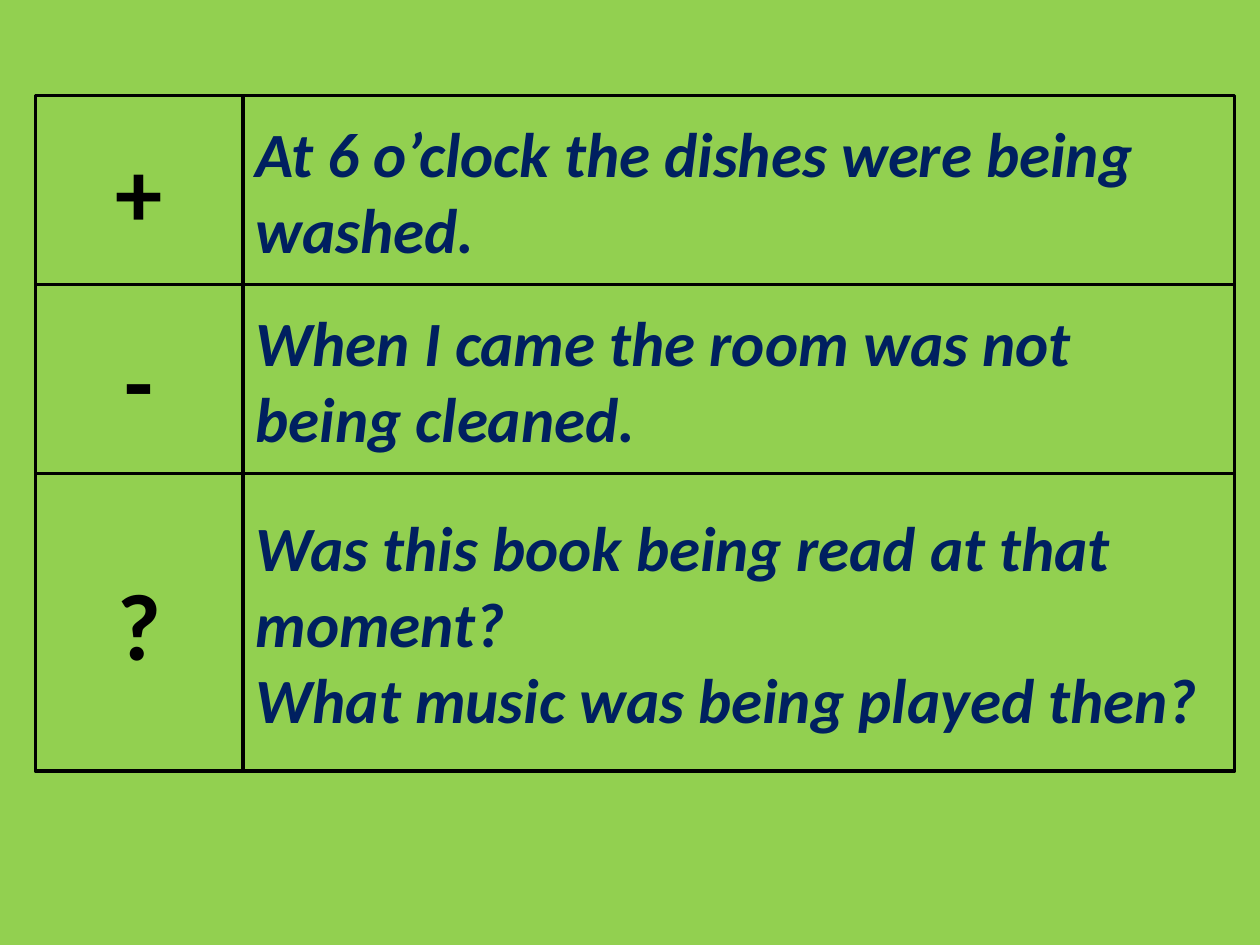
from dataclasses import dataclass

from pptx import Presentation
from pptx.dml.color import RGBColor
from pptx.enum.shapes import MSO_SHAPE
from pptx.enum.text import MSO_ANCHOR, PP_ALIGN
from pptx.slide import Slide
from pptx.util import Inches, Pt

RECTANGLE = MSO_SHAPE.RECTANGLE
MIDDLE = MSO_ANCHOR.MIDDLE
LEFT, CENTER = PP_ALIGN.LEFT, PP_ALIGN.CENTER


@dataclass(frozen=True)
class TextStyle:
    size: Pt
    color: RGBColor
    align: PP_ALIGN
    italic: bool


@dataclass(frozen=True)
class Theme:
    background: RGBColor = RGBColor(0x92, 0xD0, 0x50)
    border: RGBColor = RGBColor(0, 0, 0)
    border_width: Pt = Pt(2)
    font: str = "Calibri"
    sign: TextStyle = TextStyle(Pt(54), RGBColor(0, 0, 0), CENTER, False)
    example: TextStyle = TextStyle(Pt(36), RGBColor(0x00, 0x20, 0x60), LEFT, True)


@dataclass(frozen=True)
class Column:
    width: float
    style: TextStyle
    texts: tuple[str, ...]


THEME = Theme()
GRID_LEFT, GRID_TOP = 0.28, 0.76
ROW_HEIGHTS = (1.5, 1.5, 2.36)
COLUMNS = (
    Column(1.65, THEME.sign, ("+", "-", "?")),
    Column(7.87, THEME.example, (
        "At 6 o’clock the dishes were being washed.",
        "When I came the room was not being cleaned.",
        "Was this book being read at that moment?\nWhat music was being played then?",
    )),
)


def add_cell(s: Slide, left: float, top: float, width: float, height: float,
             text: str, style: TextStyle) -> None:
    sp = s.shapes.add_shape(RECTANGLE, Inches(left), Inches(top),
                            Inches(width), Inches(height))
    sp.shadow.inherit = False
    sp.fill.background()
    sp.line.color.rgb = THEME.border
    sp.line.width = THEME.border_width
    tf = sp.text_frame
    tf.word_wrap = True
    tf.vertical_anchor = MIDDLE
    tf.text = text
    for p in tf.paragraphs:
        p.alignment = style.align
        for r in p.runs:
            r.font.name = THEME.font
            r.font.size = style.size
            r.font.bold = True
            r.font.italic = style.italic
            r.font.color.rgb = style.color


def add_sentence_grid(s: Slide) -> None:
    left = GRID_LEFT
    for column in COLUMNS:
        top = GRID_TOP
        for text, height in zip(column.texts, ROW_HEIGHTS):
            add_cell(s, left, top, column.width, height, text, column.style)
            top += height
        left += column.width


def main() -> None:
    prs = Presentation()
    prs.slide_width, prs.slide_height = Inches(10), Inches(7.5)
    s = prs.slides.add_slide(prs.slide_layouts[6])
    s.background.fill.solid()
    s.background.fill.fore_color.rgb = THEME.background
    add_sentence_grid(s)
    prs.save("out.pptx")


if __name__ == "__main__":
    main()
